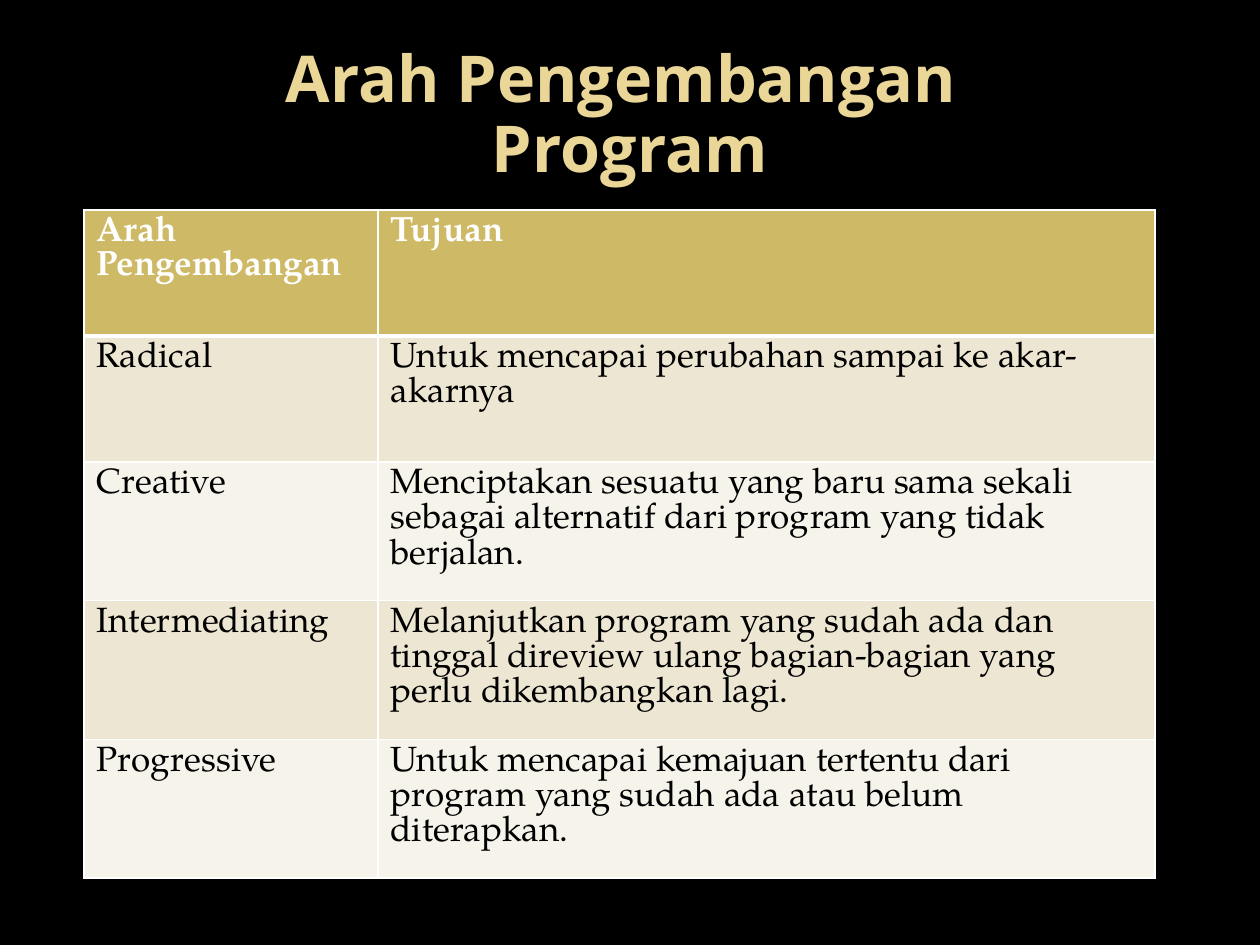
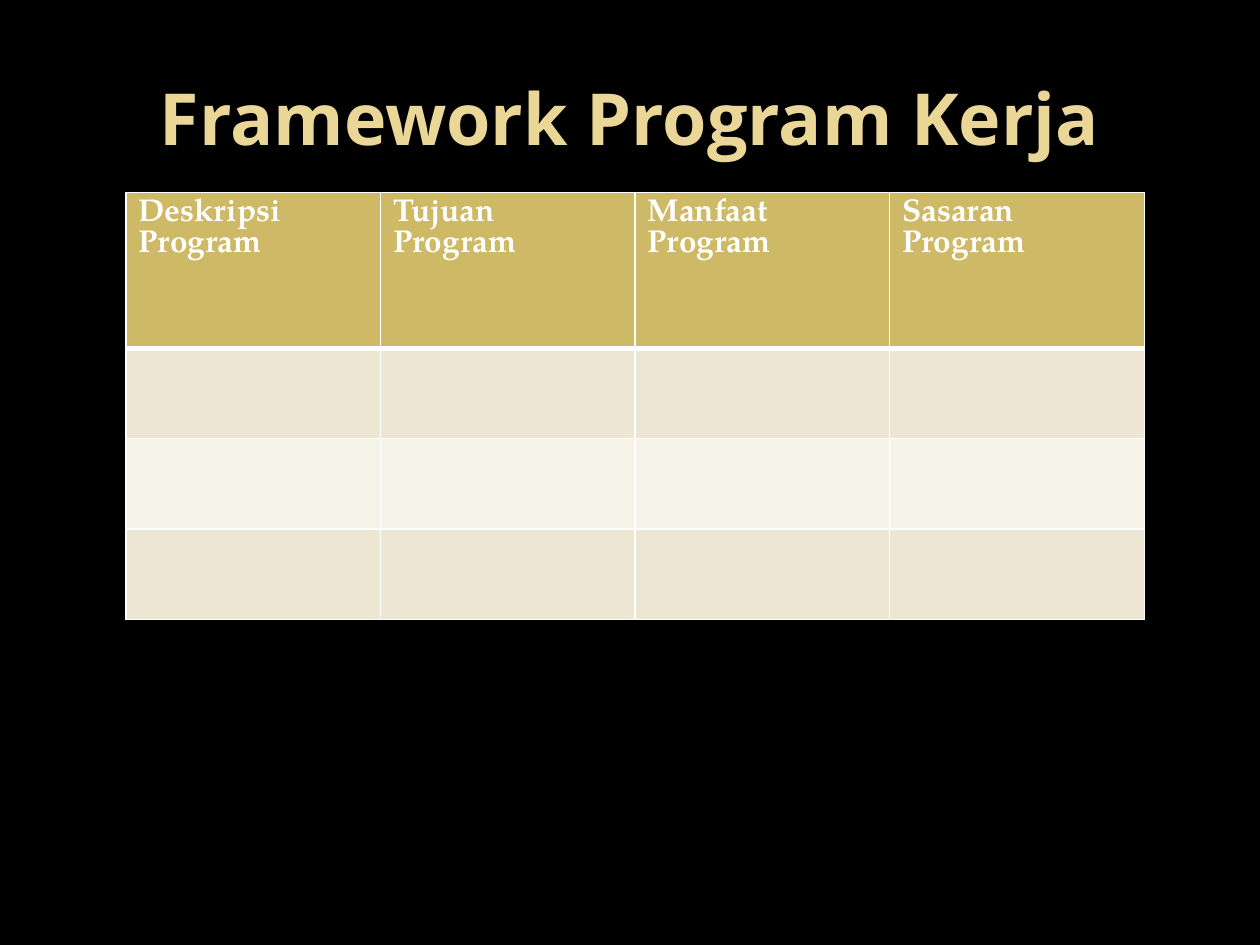
from lxml import etree
from pptx import Presentation
from pptx.dml.color import RGBColor
from pptx.enum.text import MSO_ANCHOR, PP_ALIGN
from pptx.oxml.ns import qn
from pptx.util import Pt

# Shared style
BLACK = RGBColor(0x00, 0x00, 0x00)
WHITE = RGBColor(0xFF, 0xFF, 0xFF)
TITLE_GOLD = RGBColor(0xEA, 0xD6, 0x96)
HEADER_GOLD = RGBColor(0xCE, 0xB9, 0x66)
DARK_BAND = RGBColor(0xED, 0xE6, 0xD3)
LIGHT_BAND = RGBColor(0xF6, 0xF3, 0xEA)
TITLE_FONT = "Open Sans"
TABLE_FONT = "TeX Gyre Pagella"
THIN, THICK = Pt(1), Pt(3)

# Table contents
DIRECTIONS = [
    ["Arah Pengembangan", "Tujuan"],
    ["Radical", "Untuk mencapai perubahan sampai ke akar-akarnya"],
    ["Creative", "Menciptakan sesuatu yang baru sama sekali sebagai "
                 "alternatif dari program yang tidak berjalan."],
    ["Intermediating", "Melanjutkan program yang sudah ada dan tinggal direview "
                       "ulang bagian-bagian yang perlu dikembangkan lagi."],
    ["Progressive", "Untuk mencapai kemajuan tertentu dari program yang sudah "
                    "ada atau belum diterapkan."],
]
FRAMEWORK = [
    [f"{topic} Program" for topic in ("Deskripsi", "Tujuan", "Manfaat", "Sasaran")],
] + [[""] * 4] * 3


def format_runs(paragraph, font_name, size, color, bold):
    for run in paragraph.runs:
        run.font.name = font_name
        run.font.size = Pt(size)
        run.font.color.rgb = color
        run.font.bold = bold


def add_titled_slide(presentation, title, size, line_spacing=1.0):
    slide = presentation.slides.add_slide(presentation.slide_layouts[6])
    slide.background.fill.solid()
    slide.background.fill.fore_color.rgb = BLACK

    title_box = slide.shapes.add_textbox(Pt(36), Pt(21.6), Pt(648), Pt(90))
    text_frame = title_box.text_frame
    text_frame.word_wrap = True
    text_frame.vertical_anchor = MSO_ANCHOR.MIDDLE
    paragraph = text_frame.paragraphs[0]
    paragraph.text = title
    paragraph.alignment = PP_ALIGN.CENTER
    paragraph.line_spacing = line_spacing
    format_runs(paragraph, TITLE_FONT, size, TITLE_GOLD, True)
    return slide


def set_borders(cell, top, bottom):
    properties = cell._tc.get_or_add_tcPr()
    for side, width in (("L", THIN), ("R", THIN), ("T", top), ("B", bottom)):
        line = etree.SubElement(properties, qn(f"a:ln{side}"), w=str(int(width)))
        fill = etree.SubElement(line, qn("a:solidFill"))
        etree.SubElement(fill, qn("a:srgbClr"), val=str(WHITE))


def style_cell(cell, row, size):
    is_header = row == 0
    # The rule below the header is thick on both cells that share it
    set_borders(cell, THICK if row == 1 else THIN, THICK if is_header else THIN)
    cell.fill.solid()
    if is_header:
        cell.fill.fore_color.rgb = HEADER_GOLD
    else:
        cell.fill.fore_color.rgb = DARK_BAND if row % 2 else LIGHT_BAND
    format_runs(cell.text_frame.paragraphs[0], TABLE_FONT, size,
                WHITE if is_header else BLACK, is_header)


def add_banded_table(slide, rows, left, top, widths, heights, size):
    frame = slide.shapes.add_table(len(rows), len(widths), Pt(left), Pt(top),
                                   Pt(sum(widths)), Pt(sum(heights)))
    table = frame.table
    for column, width in zip(table.columns, widths):
        column.width = Pt(width)
    for table_row, height in zip(table.rows, heights):
        table_row.height = Pt(height)
    for row, texts in enumerate(rows):
        for column, text in enumerate(texts):
            cell = table.cell(row, column)
            cell.text_frame.text = text
            style_cell(cell, row, size)


def main():
    presentation = Presentation()
    presentation.slide_width, presentation.slide_height = Pt(720), Pt(540)

    # Directions of development
    slide = add_titled_slide(presentation, "Arah Pengembangan \vProgram", 36.9, 0.9)
    add_banded_table(slide, DIRECTIONS, 48, 120, [168, 444], [72] * 5, 20)

    # Work programme framework
    slide = add_titled_slide(presentation, "Framework Program Kerja", 41)
    add_banded_table(slide, FRAMEWORK, 72, 110, [145.5] * 4, [89] + [51.7] * 3, 18)

    presentation.save("out.pptx")


if __name__ == "__main__":
    main()
